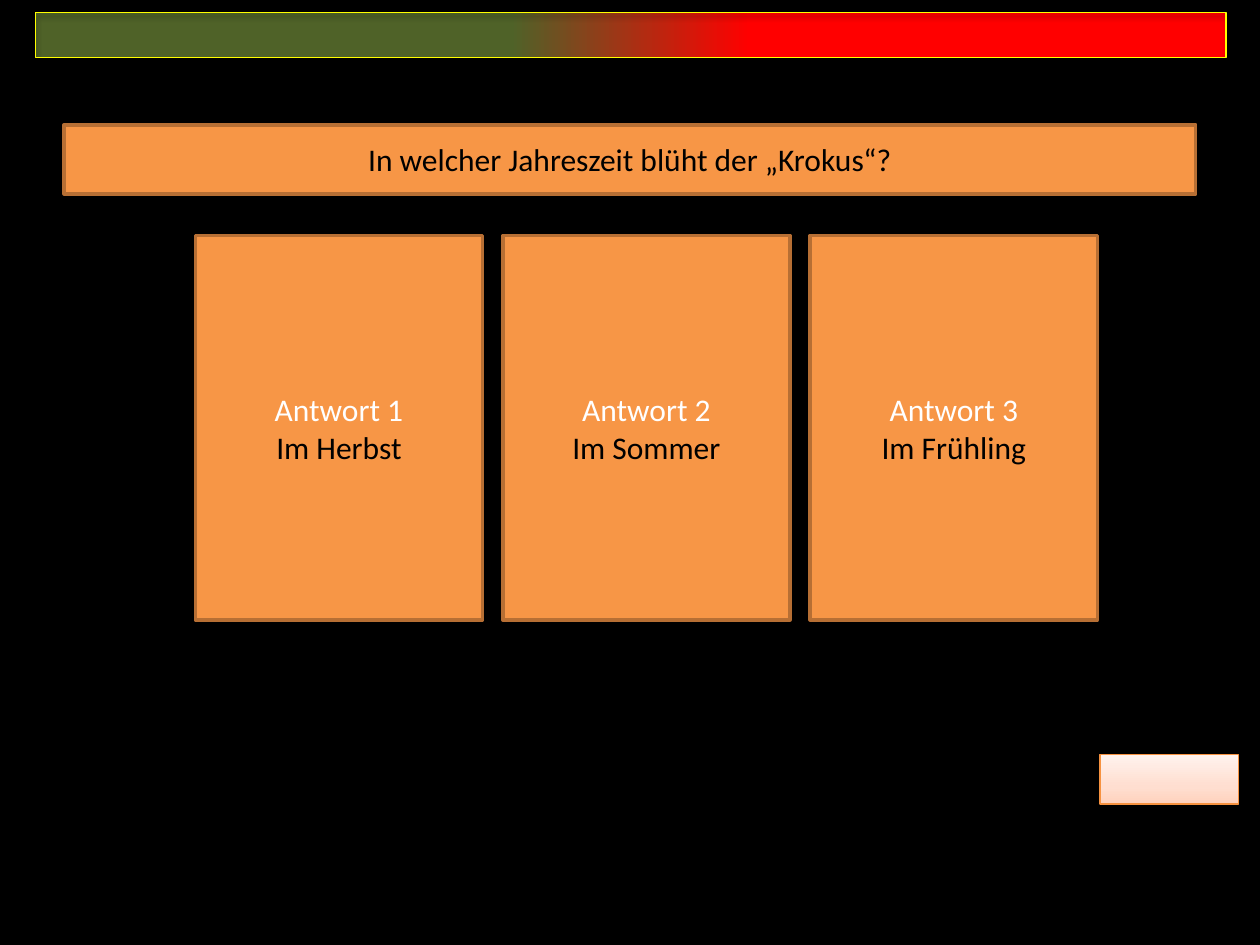
from lxml.etree import SubElement as Sub
from pptx import Presentation
from pptx.dml.color import RGBColor as RGB
from pptx.enum.shapes import MSO_SHAPE as Kind
from pptx.enum.text import MSO_ANCHOR as Anchor, MSO_AUTO_SIZE as Fit, PP_ALIGN as Align
from pptx.oxml.ns import qn
from pptx.util import Inches, Pt

ORANGE, BROWN = "F79646", "B76F34"


def style(box, text="", colors=(), fill=None, stops=(), angle=0, line=None, width=0.75, shade=None):
    """Format a box; stops are (percent, colour), shade is (opacity, blur, distance)."""
    if stops:
        box.fill.gradient()
        box.fill.gradient_angle = angle
        ramp = box.element.find(".//" + qn("a:gsLst"))
        for old in list(ramp):
            ramp.remove(old)
        for pos, color in stops:
            stop = Sub(ramp, qn("a:gs"), pos=str(pos * 1000))
            Sub(stop, qn("a:srgbClr"), val=color)
    elif fill:
        box.fill.solid()
        box.fill.fore_color.rgb = RGB.from_string(fill)
    else:
        box.fill.background()

    if line:
        box.line.color.rgb = RGB.from_string(line)
        box.line.width = Pt(width)
    else:
        box.line.fill.background()

    box.shadow.inherit = False
    if shade:
        alpha, blur, dist = shade
        effect = box.element.find(".//" + qn("a:effectLst"))
        outer = Sub(effect, qn("a:outerShdw"), blurRad=str(Pt(blur)), dist=str(Pt(dist)),
                    dir="5400000", rotWithShape="0")
        tone = Sub(outer, qn("a:srgbClr"), val="000000")
        Sub(tone, qn("a:alpha"), val=str(alpha * 1000))

    if text:
        frame = box.text_frame
        frame.text = text
        frame.word_wrap = True
        frame.auto_size = Fit.NONE
        frame.vertical_anchor = Anchor.MIDDLE
        for para, color in zip(frame.paragraphs, colors):
            para.alignment = Align.CENTER
            font = para.runs[0].font
            font.name, font.size = "Calibri", Pt(18)
            font.color.rgb = RGB.from_string(color)


def rect(x, y, w, h, **form):
    box = slide.shapes.add_shape(Kind.RECTANGLE, Inches(x), Inches(y), Inches(w), Inches(h))
    style(box, **form)


deck = Presentation()
deck.slide_width, deck.slide_height = Inches(10), Inches(7.5)
slide = deck.slides.add_slide(deck.slide_layouts[5])
slide.background.fill.solid()
slide.background.fill.fore_color.rgb = RGB.from_string("000000")

# Green-to-red time bar with its yellow frame
bar = (0.28, 0.1, 9.45, 0.36)
soft = (35, 3.1, 1.8)
rect(*bar, stops=[(40, "4F6228"), (60, "FF0000")], shade=soft)
rect(*bar, line="FFFF00", shade=soft)

# Question
title = slide.shapes.title
title.left, title.top = Inches(0.51), Inches(0.99)
title.width, title.height = Inches(8.98), Inches(0.55)
style(title, text="In welcher Jahreszeit blüht der „Krokus“?", colors=["000000"],
      fill=ORANGE, line=BROWN, width=2)

# Button
rect(8.73, 5.99, 1.1, 0.39, stops=[(0, "FFD2BD"), (35, "FFDED0"), (100, "FFF2ED")],
     angle=90, line="F69240", shade=(38, 3.1, 1.6))

# Answer cards
for i, answer in enumerate(["Im Herbst", "Im Sommer", "Im Frühling"]):
    rect(1.55 + 2.44 * i, 1.87, 2.28, 3.05, text=f"Antwort {i + 1}\n{answer}",
         colors=["FFFFFF", "000000"], fill=ORANGE, line=BROWN, width=2)

deck.save("out.pptx")
